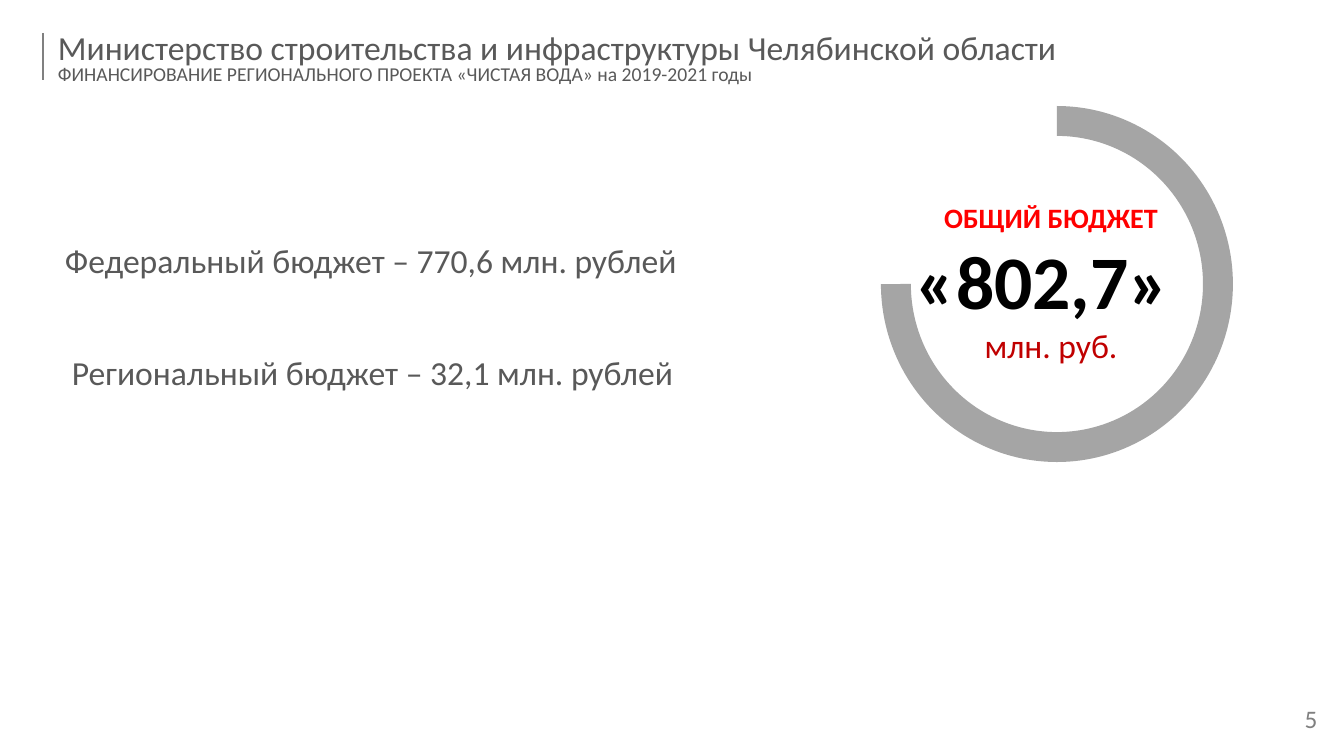
import pptx
import pptx.dml.color
import pptx.enum.shapes
import pptx.enum.text
import pptx.oxml
import pptx.util

PX = 914400 / 100.8
GRAY, DARK = "808080", "595959"
ALIGN = pptx.enum.text.PP_ALIGN
ANCHOR = pptx.enum.text.MSO_ANCHOR


def color(hex_value):
    return pptx.dml.color.RGBColor.from_string(hex_value)


def px(*lengths):
    """Turn pixel lengths into a list of EMU."""
    return [round(length * PX) for length in lengths]


presentation = pptx.Presentation()
presentation.slide_width, presentation.slide_height = px(1344, 756)
slide = presentation.slides.add_slide(presentation.slide_layouts[6])

title_rule = slide.shapes.add_connector(
    pptx.enum.shapes.MSO_CONNECTOR.STRAIGHT, *px(43, 33, 43, 80))
title_rule.line.color.rgb = color(GRAY)
title_rule.line.width = pptx.util.Pt(1.5)
title_rule._element.spPr.append(pptx.oxml.parse_xml(
    '<a:effectLst xmlns:a="http://schemas.openxmlformats.org/drawingml/2006/main"/>'))

# Three quarters of a ring, clockwise from the top (270°) to the left (180°)
budget_ring = slide.shapes.add_shape(
    pptx.enum.shapes.MSO_SHAPE.BLOCK_ARC, *px(881, 106, 352, 356))
for index, value in enumerate((270 * 0.6, 180 * 0.6, 0.085)):
    budget_ring.adjustments[index] = value
budget_ring.shadow.inherit = False
budget_ring.fill.solid()
budget_ring.fill.fore_color.rgb = color("A5A5A5")
budget_ring.line.fill.background()

# Box, anchor, paragraph format, lines of (text, size, color, bold)
text_blocks = [
    ((1278, 696, 66, 50), ANCHOR.MIDDLE, {"alignment": ALIGN.CENTER, "line_spacing": 0.8},
     [("5", 18, GRAY, False)]),
    ((55, 235, 740, 50), ANCHOR.TOP, {"alignment": ALIGN.JUSTIFY},
     [("Федеральный бюджет – 770,6 млн. рублей ", 24, DARK, False)]),
    ((62, 347, 684, 50), ANCHOR.TOP, {"alignment": ALIGN.JUSTIFY},
     [("Региональный бюджет – 32,1 млн. рублей ", 24, DARK, False)]),
    ((48, 26, 1290, 68), ANCHOR.MIDDLE, {"alignment": ALIGN.LEFT, "line_spacing": 0.8},
     [("Министерство строительства и инфраструктуры Челябинской области", 24, DARK, False),
      ("ФИНАНСИРОВАНИЕ РЕГИОНАЛЬНОГО ПРОЕКТА «ЧИСТАЯ ВОДА» на 2019-2021 годы",
       14, DARK, False)]),
    ((873, 195, 356, 176), ANCHOR.MIDDLE, {"alignment": ALIGN.CENTER},
     [("ОБЩИЙ БЮДЖЕТ", 20, "FF0000", True),
      ("«802,7» ", 54, "000000", True),
      ("млн. руб.", 24, "C00000", False)]),
]

for box, anchor, paragraph_format, lines in text_blocks:
    text_frame = slide.shapes.add_textbox(*px(*box)).text_frame
    text_frame.word_wrap = True
    text_frame.vertical_anchor = anchor
    for index, (text, size, text_color, bold) in enumerate(lines):
        paragraph = text_frame.add_paragraph() if index else text_frame.paragraphs[0]
        for name, value in paragraph_format.items():
            setattr(paragraph, name, value)
        run = paragraph.add_run()
        run.text = text
        font_format = {"name": "Calibri", "size": pptx.util.Pt(size), "bold": bold}
        for name, value in font_format.items():
            setattr(run.font, name, value)
        run.font.color.rgb = color(text_color)

presentation.save("out.pptx")
